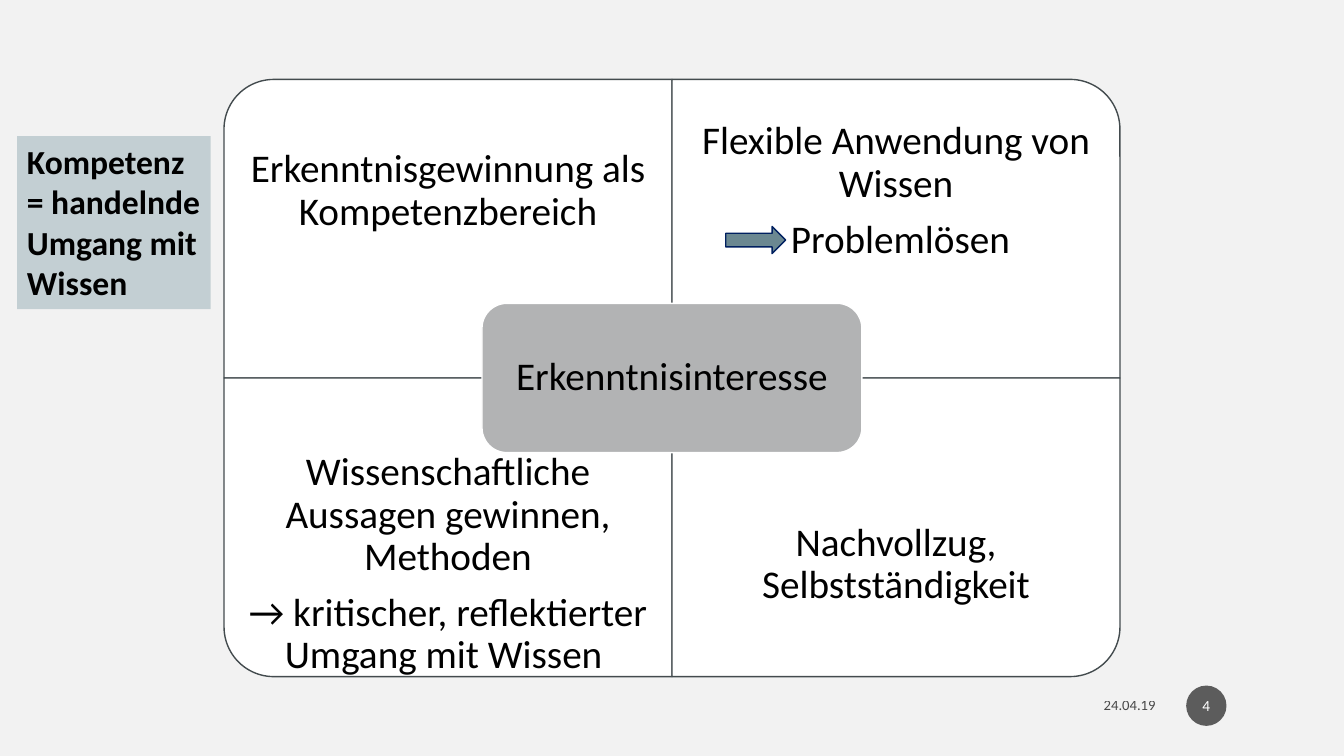
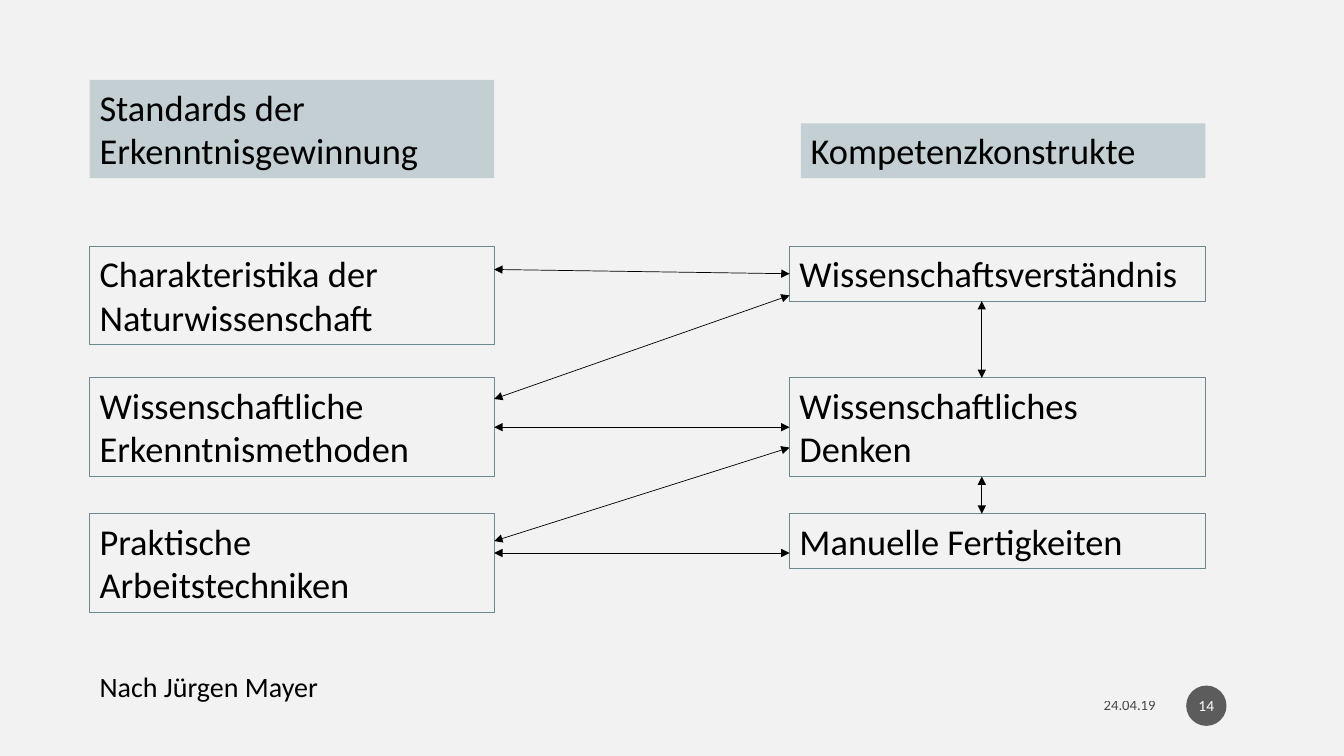
from dataclasses import dataclass

from lxml import etree
from pptx import Presentation
from pptx.dml.color import RGBColor
from pptx.enum import shapes, text
from pptx.oxml.ns import qn
from pptx.util import Pt

SHAPE = shapes.MSO_SHAPE
ALIGN = text.PP_ALIGN
ANCHOR = text.MSO_ANCHOR


@dataclass(frozen=True)
class Theme:
    font: str = "Calibri"
    background: str = "F2F2F2"
    ink: str = "000000"
    paper: str = "FFFFFF"
    badge: str = "1D1D1D"
    band: str = "C3CFD3"
    accent: str = "6B8891"
    arrow_edge: str = "002060"
    quadrant_edge: str = "434B4E"
    core: str = "B2B3B4"
    quadrant_size: float = 28
    box_size: float = 26
    note_size: float = 24
    source_size: float = 20
    number_size: float = 11
    date_size: float = 10.5


T = Theme()
GROW = {"auto_size": text.MSO_AUTO_SIZE.SHAPE_TO_FIT_TEXT}
CENTRED = {"alignment": ALIGN.CENTER, "line_spacing": 0.9, "space_after": Pt(9.8)}


def rgb(value):
    return RGBColor.from_string(value)


def apply(target, formats):
    for name, value in formats.items():
        setattr(target, name, value)


def insets(x, y):
    return {"margin_left": Pt(x), "margin_right": Pt(x),
            "margin_top": Pt(y), "margin_bottom": Pt(y)}


def fade(sp, percent):
    color = next(sp._element.iter(qn("a:srgbClr")))
    etree.SubElement(color, qn("a:alpha")).set("val", str(percent * 1000))


def write(sp, lines, size, color=T.ink, bold=False, frame=None, para=None):
    tf = sp.text_frame
    apply(tf, {"word_wrap": True, "vertical_anchor": ANCHOR.TOP, **(frame or {})})
    for i, line in enumerate(lines):
        p = tf.paragraphs[0] if i == 0 else tf.add_paragraph()
        apply(p, {"alignment": ALIGN.LEFT, **(para or {})})
        r = p.add_run()
        r.text = line
        apply(r.font, {"name": T.font, "size": Pt(size), "bold": bold})
        r.font.color.rgb = rgb(color)


def add_shape(s, kind, box, fill=None, line=None, width=1):
    sp = s.shapes.add_shape(kind, *map(Pt, box))
    sp.shadow.inherit = False
    if fill:
        sp.fill.solid()
        sp.fill.fore_color.rgb = rgb(fill)
    else:
        sp.fill.background()
    if line:
        sp.line.color.rgb = rgb(line)
        sp.line.width = Pt(width)
    else:
        sp.line.fill.background()
    return sp


def add_text(s, box, lines, size, **formats):
    sp = s.shapes.add_textbox(*map(Pt, box))
    write(sp, lines, size, **formats)
    return sp


def add_box(s, box, lines, size=T.box_size, bold=False, **look):
    sp = add_shape(s, SHAPE.RECTANGLE, box, **look)
    write(sp, lines, size, bold=bold, frame=GROW)
    return sp


def double_arrow(s, start, end):
    cx = s.shapes.add_connector(shapes.MSO_CONNECTOR.STRAIGHT, *map(Pt, start + end))
    cx.line.color.rgb = rgb(T.ink)
    cx.line.width = Pt(0.5)
    ln = cx.line._get_or_add_ln()
    for tag in ("a:headEnd", "a:tailEnd"):
        etree.SubElement(ln, qn(tag)).set("type", "triangle")
    etree.SubElement(cx._element.spPr, qn("a:effectLst"))
    return cx


def footer(s, number):
    date = add_text(s, (615.5, 491, 217, 25), ["24.04.19"], T.date_size,
                    frame={"vertical_anchor": ANCHOR.MIDDLE}, para={"alignment": ALIGN.RIGHT})
    fade(date, 70)
    badge = add_shape(s, SHAPE.OVAL, (847.3, 489.7, 28.8, 28.8), T.badge)
    fade(badge, 70)
    write(badge, [str(number)], T.number_size, T.paper,
          frame={"vertical_anchor": ANCHOR.MIDDLE, **insets(1.44, 3.6)},
          para={"alignment": ALIGN.CENTER})


def quadrant(s, box, lines, rotation, text_top):
    x, y, w, h = box
    outline = box
    if rotation % 180:
        outline = (x + (w - h) / 2, y + (h - w) / 2, h, w)
    sp = add_shape(s, SHAPE.ROUND_1_RECTANGLE, outline, T.paper, T.quadrant_edge)
    sp.rotation = rotation
    add_text(s, (x, y + text_top, w, h * 0.75), lines, T.quadrant_size,
             frame={"vertical_anchor": ANCHOR.MIDDLE, **insets(15.8, 15.8)}, para=CENTRED)


def matrix(s, box, cells, core):
    x, y, w, h = box
    half_w, half_h = w / 2, h / 2
    for i, (lines, rotation) in enumerate(cells):
        row, col = divmod(i, 2)
        quadrant(s, (x + col * half_w, y + row * half_h, half_w, half_h),
                 lines, rotation, row * half_h / 4)
    core_w, core_h = 271.4, h / 4
    sp = add_shape(s, SHAPE.ROUNDED_RECTANGLE,
                   (x + (w - core_w) / 2, y + (h - core_h) / 2, core_w, core_h),
                   T.core, T.paper)
    write(sp, [core], T.quadrant_size,
          frame={"vertical_anchor": ANCHOR.MIDDLE, **insets(8.6, 8.6)}, para=CENTRED)


def interest_slide(s):
    footer(s, 4)
    matrix(s, (160, 56.7, 640, 426.6), [
        (["Erkenntnisgewinnung als Kompetenzbereich"], 270),
        (["Flexible Anwendung von Wissen", " Problemlösen"], 0),
        (["Wissenschaftliche Aussagen gewinnen, Methoden",
          "→ kritischer, reflektierter Umgang mit Wissen "], 180),
        (["Nachvollzug, Selbstständigkeit"], 90),
    ], "Erkenntnisinteresse")
    add_box(s, (12.2, 97.2, 138.4, 123.6), ["Kompetenz", "= handelnde Umgang mit Wissen"],
            T.note_size, bold=True, fill=T.band)
    add_shape(s, SHAPE.RIGHT_ARROW, (518.4, 161.8, 42.8, 19.4), T.accent, T.arrow_edge)


def column(s, x, w, tops, entries):
    return [add_box(s, (x, top, w, h), [label], line=T.accent, width=0.75)
            for top, (label, h) in zip(tops, entries)]


def link(s, left, left_dy, right, right_dy):
    def height(sp, dy):
        return sp.top.pt + (sp.height.pt / 2 if dy is None else dy)

    cx = double_arrow(s, (left.left.pt + left.width.pt, height(left, left_dy)),
                      (right.left.pt, height(right, right_dy)))
    if left_dy is None:
        cx.begin_connect(left, 3)
    if right_dy is None:
        cx.end_connect(right, 1)


def constructs_slide(s):
    footer(s, 14)
    one, two = 39.1, 70.3
    left_x, left_w, right_x, right_w = 64, 289, 564, 297
    tops, head_bottom = (176, 270, 367), 127.3
    for x, h, label in ((left_x, two, "Standards der Erkenntnisgewinnung"),
                        (right_x + right_w - left_w, one, "Kompetenzkonstrukte")):
        add_box(s, (x, head_bottom - h, left_w, h), [label], fill=T.band)
    standards = column(s, left_x, left_w, tops, [
        ("Charakteristika der Naturwissenschaft", two),
        ("Wissenschaftliche Erkenntnismethoden", two),
        ("Praktische Arbeitstechniken", two),
    ])
    constructs = column(s, right_x, right_w, tops, [
        ("Wissenschaftsverständnis", one),
        ("Wissenschaftliches Denken", two),
        ("Manuelle Fertigkeiten", one),
    ])
    for upper, lower in zip(constructs, constructs[1:]):
        double_arrow(s, (701.3, upper.top.pt + upper.height.pt), (701.3, lower.top.pt))
    for i, left_dy, j, right_dy in ((0, 16.5, 0, None), (1, None, 1, None), (2, 28, 2, 28),
                                    (2, 19.5, 1, 49.7), (1, 15, 0, 35)):
        link(s, standards[i], left_dy, constructs[j], right_dy)
    add_text(s, (left_x, 474.5, 195, 31.5), ["Nach Jürgen Mayer"], T.source_size, frame=GROW)


def main():
    prs = Presentation()
    prs.slide_width, prs.slide_height = Pt(960), Pt(540)
    fill = prs.slide_master.background.fill
    fill.solid()
    fill.fore_color.rgb = rgb(T.background)
    for build in (interest_slide, constructs_slide):
        build(prs.slides.add_slide(prs.slide_layouts[6]))
    prs.save("out.pptx")


if __name__ == "__main__":
    main()
